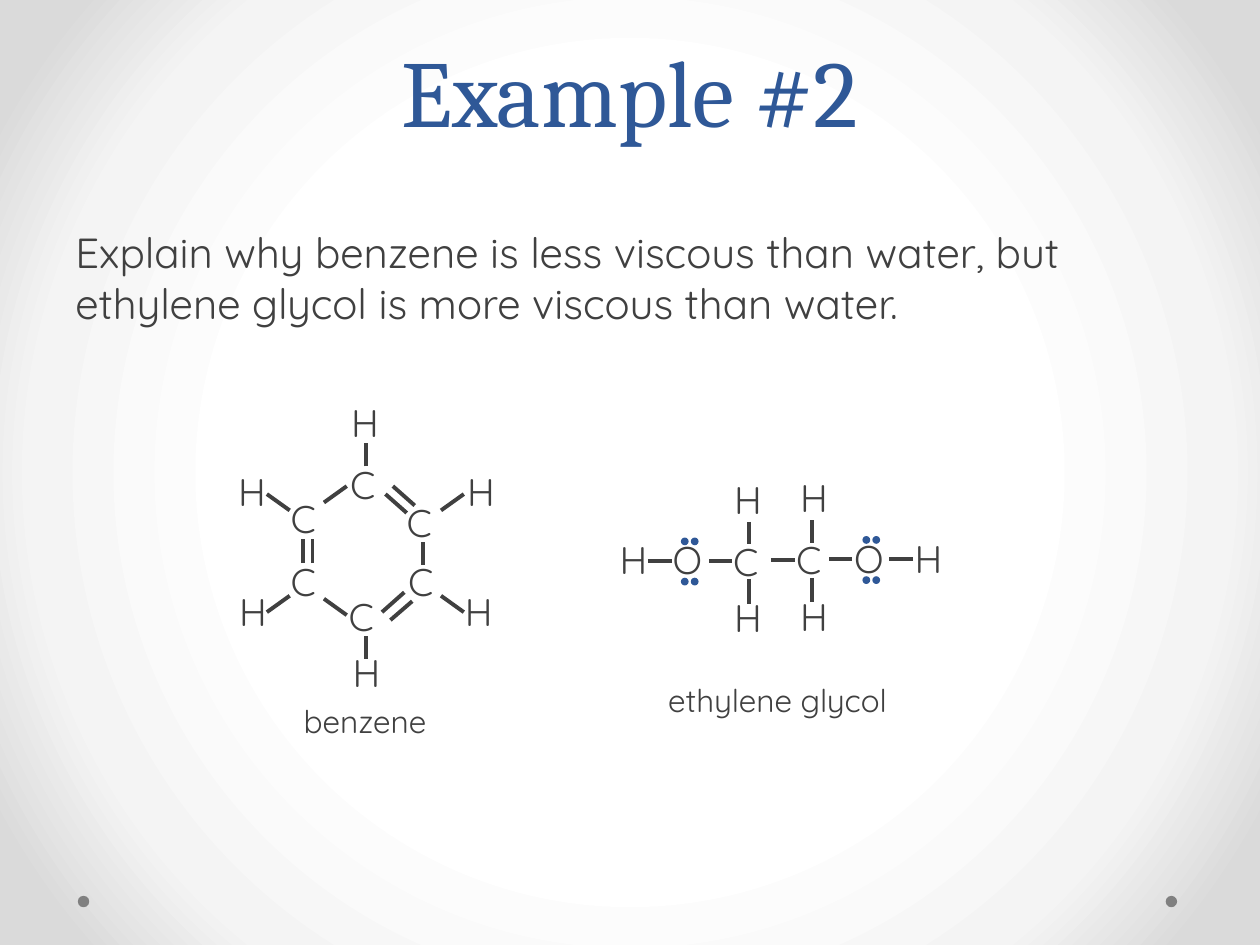
from lxml import etree
from pptx import Presentation
from pptx.dml.color import RGBColor
from pptx.enum.shapes import MSO_CONNECTOR, MSO_SHAPE
from pptx.enum.text import MSO_ANCHOR, MSO_AUTO_SIZE, PP_ALIGN
from pptx.oxml import parse_xml
from pptx.oxml.ns import nsdecls, qn
from pptx.util import Cm, Pt

BLUE = RGBColor(0x2F, 0x58, 0x97)
DARK = RGBColor(0x40, 0x40, 0x40)
GRAY = RGBColor(0x80, 0x80, 0x80)
WHITE = RGBColor(0xFF, 0xFF, 0xFF)
PALE = RGBColor(0xF4, 0xF4, 0xF4)
SILVER = RGBColor(0xDA, 0xDA, 0xDA)

ATOM_WIDTH = {"H": 1.04, "C": 1.14, "O": 1.19}
ATOM_HEIGHT = 1.19
DOT = 0.13
MIRROR_SUM = 31.47

BENZENE_ATOMS = {
    "C": [(6.81, 9.17), (7.95, 9.93), (7.98, 11.13),
          (6.78, 11.84), (5.61, 11.13), (5.61, 9.86)],
    "H": [(6.83, 7.92), (9.17, 9.32), (9.12, 11.73),
          (6.86, 12.95), (4.57, 11.73), (4.55, 9.32)],
}
BENZENE_BONDS = [
    (6.53, 10.13, 6.99, 9.8), (6.3, 11.35, 6.3, 10.87),
    (6.1, 11.35, 6.1, 10.87), (7.87, 12.5, 8.31, 12.12),
    (7.7, 12.34, 8.15, 11.94), (5.38, 12.34, 5.84, 12.01),
    (8.89, 10.29, 9.35, 9.96), (6.99, 12.4, 6.53, 12.07),
    (5.84, 10.29, 5.38, 9.96), (9.35, 12.34, 8.89, 12.01),
    (8.2, 10.34, 7.77, 9.96), (8.36, 10.19, 7.92, 9.8),
    (7.37, 13.28, 7.37, 12.83), (8.53, 11.38, 8.53, 10.92),
    (7.37, 9.4, 7.37, 8.94),
]
GLYCOL_ATOMS = {
    "H": [(12.24, 10.69), (14.55, 11.86), (14.55, 9.47)],
    "O": [(13.31, 10.69)],
    "C": [(14.53, 10.72)],
}
GLYCOL_BONDS = [
    (13.06, 11.3, 13.54, 11.3), (14.3, 11.3, 14.76, 11.3),
    (15.1, 11.68, 15.1, 12.17), (15.1, 10.52, 15.1, 10.97),
]


def write(tf, text, size=22, font="Quicksand", color=DARK,
          align=PP_ALIGN.LEFT, anchor=MSO_ANCHOR.TOP, wrap=True, spacing=None):
    tf.word_wrap = wrap
    tf.auto_size = MSO_AUTO_SIZE.NONE
    tf.vertical_anchor = anchor
    p = tf.paragraphs[0]
    p.alignment = align
    if spacing:
        p.line_spacing = Pt(spacing)
    r = p.add_run()
    r.text = text
    r.font.size = Pt(size)
    r.font.name = font
    r.font.color.rgb = color


def add_text(s, text, x, y, w, h, **fmt):
    sp = s.shapes.add_textbox(Cm(x), Cm(y), Cm(w), Cm(h))
    write(sp.text_frame, text, **fmt)


def add_atom(s, symbol, x, y):
    add_text(s, symbol, x, y, ATOM_WIDTH[symbol], ATOM_HEIGHT, wrap=False)


def add_bond(s, x1, y1, x2, y2):
    c = s.shapes.add_connector(MSO_CONNECTOR.STRAIGHT, Cm(x1), Cm(y1), Cm(x2), Cm(y2))
    c.line.color.rgb = DARK
    c.line.width = Pt(2.25)
    etree.SubElement(c.element.spPr, qn("a:effectLst"))


def add_dot(s, x, y, size, color, outlined=True):
    sp = s.shapes.add_shape(MSO_SHAPE.OVAL, Cm(x), Cm(y), Cm(size), Cm(size))
    sp.shadow.inherit = False
    sp.fill.solid()
    sp.fill.fore_color.rgb = color
    if outlined:
        sp.line.color.rgb = color
        sp.line.width = Pt(0.75)
    else:
        sp.line.fill.background()


def set_background(s):
    s.background.fill.solid()
    stops = "".join(
        f'<a:gs pos="{pos * 1000}"><a:srgbClr val="{color}"/></a:gs>'
        for pos, color in [(50, WHITE), (76, PALE), (92, SILVER)])
    grad = parse_xml(
        f'<a:gradFill {nsdecls("a")} rotWithShape="1"><a:gsLst>{stops}</a:gsLst>'
        '<a:path path="circle"><a:fillToRect l="50000" t="50000" r="50000" b="50000"/>'
        '</a:path></a:gradFill>')
    bg = s.element.find(".//" + qn("p:bgPr"))
    bg.replace(bg[0], grad)


def add_title(s, text):
    sp = s.shapes.title
    sp.left, sp.top, sp.width, sp.height = Cm(1.27), Cm(0), Cm(22.86), Cm(3.07)
    write(sp.text_frame, text, size=54, font="Cambria", color=BLUE,
          align=PP_ALIGN.CENTER, anchor=MSO_ANCHOR.BOTTOM, spacing=58)


def add_molecule(s, atoms, bonds):
    for bond in bonds:
        add_bond(s, *bond)
    for symbol, places in atoms.items():
        for x, y in places:
            add_atom(s, symbol, x, y)


def add_lone_pairs(s, left, top):
    for dx in (0, 0.2):
        for dy in (0, 0.81):
            add_dot(s, left + dx, top + dy, DOT, BLUE)


def mirror_atoms(atoms, dy):
    return {symbol: [(MIRROR_SUM - x - ATOM_WIDTH[symbol], y + dy) for x, y in places]
            for symbol, places in atoms.items()}


def mirror_bonds(bonds, dy):
    return [(MIRROR_SUM - x1, y1 + dy, MIRROR_SUM - x2, y2 + dy)
            for x1, y1, x2, y2 in bonds]


def add_glycol(s):
    lift = -0.03
    add_molecule(s, GLYCOL_ATOMS, GLYCOL_BONDS)
    add_molecule(s, mirror_atoms(GLYCOL_ATOMS, lift), mirror_bonds(GLYCOL_BONDS, lift))
    add_bond(s, 15.54, 11.28, 16.03, 11.28)
    add_lone_pairs(s, 13.74, 10.85)
    add_lone_pairs(s, 17.4, 10.85 + lift)


def main():
    prs = Presentation()
    prs.slide_width, prs.slide_height = Cm(25.4), Cm(19.05)
    s = prs.slides.add_slide(prs.slide_layouts[5])
    set_background(s)
    for x in (1.57, 23.5):
        add_dot(s, x, 18.06, 0.23, GRAY, outlined=False)
    add_title(s, "Example #2")
    add_text(s, "Explain why benzene is less viscous than water, but "
             "ethylene glycol is more viscous than water.",
             1.27, 4.45, 22.86, 12.57, size=24)
    add_glycol(s)
    add_molecule(s, BENZENE_ATOMS, BENZENE_BONDS)
    for name, x, y, w in [("benzene", 5.66, 14.02, 3.4),
                          ("ethylene glycol", 12.93, 13.61, 5.49)]:
        add_text(s, name, x, y, w, 1.02, size=18, align=PP_ALIGN.CENTER)
    prs.save("out.pptx")


if __name__ == "__main__":
    main()
